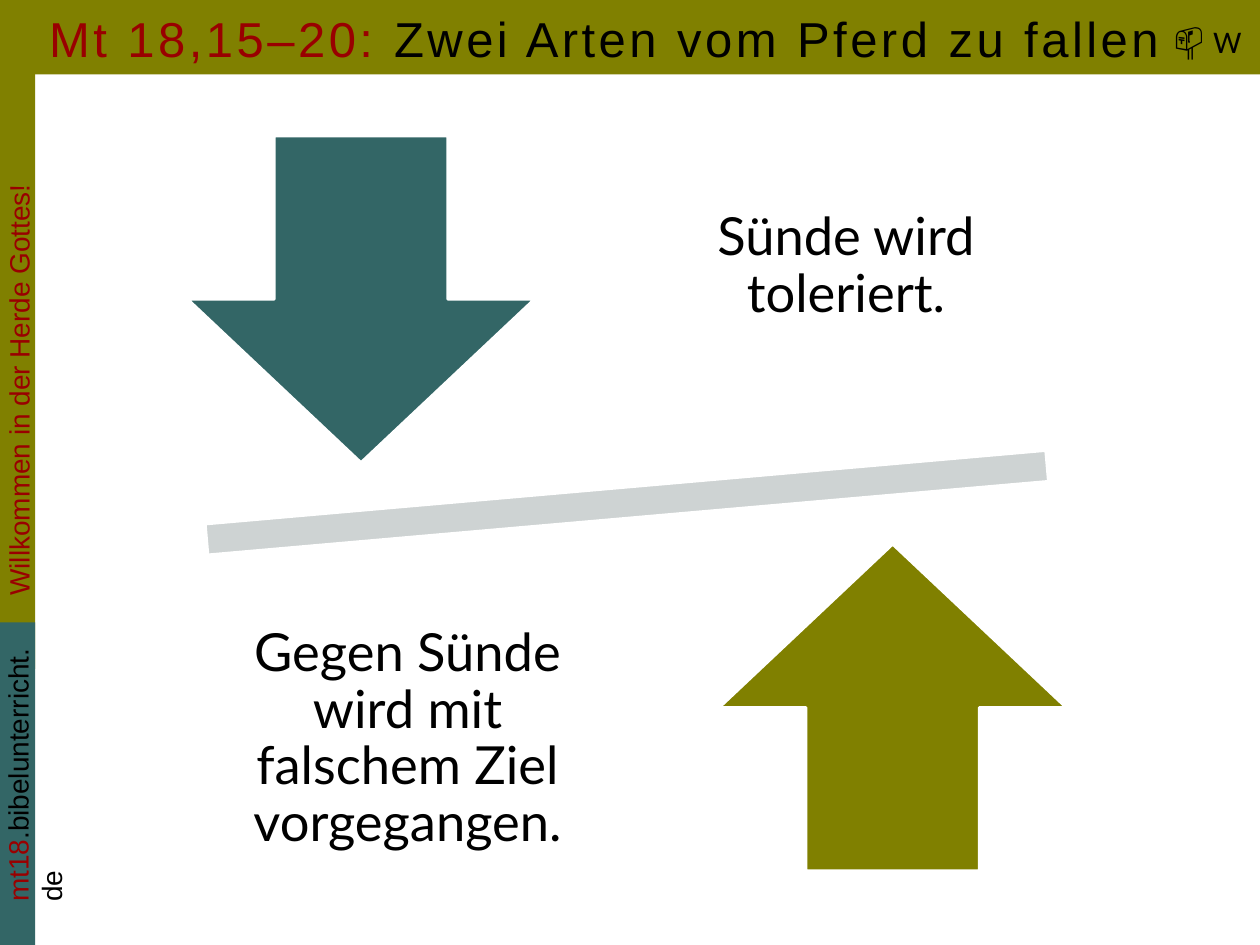
import dataclasses

import pptx
import pptx.dml.color
import pptx.enum.shapes
import pptx.enum.text
import pptx.util

Inches = pptx.util.Inches
Shape = pptx.enum.shapes.MSO_SHAPE
Align = pptx.enum.text.PP_ALIGN
Anchor = pptx.enum.text.MSO_ANCHOR
AutoSize = pptx.enum.text.MSO_AUTO_SIZE


@dataclasses.dataclass(frozen=True)
class Theme:
    """Colours, fonts and type sizes of the slide."""
    olive: str = "808000"
    teal: str = "336666"
    beam: str = "CED3D3"
    red: str = "990000"
    black: str = "000000"
    white: str = "FFFFFF"
    main_font: str = "Arial"
    mark_font: str = "Calibri"
    body_font: str = "Lato"
    title_size: int = 28
    body_size: int = 30
    side_size: int = 16
    icon_size: int = 20
    mark_size: int = 18


THEME = Theme()


def rgb(value):
    """Turn a hex string into a colour."""
    return pptx.dml.color.RGBColor.from_string(value)


def add_shape(slide, kind, box, fill, outlined=False, rotation=0):
    """Add a filled preset shape, with a white outline if asked."""
    shape = slide.shapes.add_shape(kind, *map(Inches, box))
    shape.shadow.inherit = False
    shape.fill.solid()
    shape.fill.fore_color.rgb = rgb(fill)
    shape.rotation = rotation
    if outlined:
        shape.line.color.rgb = rgb(THEME.white)
        shape.line.width = pptx.util.Pt(1.5)
    else:
        shape.line.fill.background()
    return shape


def add_run(paragraph, text, *, size, color=THEME.black, font=THEME.main_font, tracking=0):
    """Append formatted text to a paragraph, with tracking in points."""
    run = paragraph.add_run()
    run.text = text
    run.font.size = pptx.util.Pt(size)
    run.font.name = font
    run.font.color.rgb = rgb(color)
    if tracking:
        run.font._element.set("spc", str(tracking * 100))


def add_text_box(slide, box, *, align=Align.LEFT, anchor=Anchor.TOP, inset=None,
                 rotation=0, grow=False):
    """Add a wrapping text box and return its first paragraph."""
    shape = slide.shapes.add_textbox(*map(Inches, box))
    shape.rotation = rotation
    frame = shape.text_frame
    frame.word_wrap = True
    frame.vertical_anchor = anchor
    frame.auto_size = AutoSize.SHAPE_TO_FIT_TEXT if grow else AutoSize.NONE
    if inset is not None:
        frame.margin_left = frame.margin_right = Inches(inset)
        frame.margin_top = frame.margin_bottom = Inches(inset)
    paragraph = frame.paragraphs[0]
    paragraph.alignment = align
    return paragraph


def add_frame(slide):
    """Draw the top and side bars with the vertical lettering."""
    add_shape(slide, Shape.RECTANGLE, (-0.01, -0.01, 10.01, 0.6), THEME.olive)
    add_shape(slide, Shape.RECTANGLE, (0, 0, 0.28, 5.31), THEME.olive)
    add_shape(slide, Shape.RECTANGLE, (0, 4.94, 0.28, 2.57), THEME.teal)
    address = add_text_box(slide, (-1.02, 5.91, 2.32, 0.37), rotation=270, grow=True)
    add_run(address, "mt18", size=THEME.side_size, color=THEME.red)
    add_run(address, ".bibelunterricht.de", size=THEME.side_size)
    welcome = add_text_box(slide, (-1.78, 2.84, 3.73, 0.24), rotation=270, grow=True)
    add_run(welcome, "Willkommen in der Herde Gottes!", size=THEME.side_size,
            color=THEME.red)


def add_header(slide):
    """Write the title and the mark in the top bar."""
    title = add_text_box(slide, (0.39, 0.05, 8.91, 0.5), anchor=Anchor.MIDDLE, inset=0)
    add_run(title, "Mt 18,15–20:", size=THEME.title_size, color=THEME.red, tracking=2)
    add_run(title, " Zwei Arten vom Pferd zu fallen", size=THEME.title_size, tracking=2)
    mark = add_text_box(slide, (9.09, 0.1, 0.86, 0.44), align=Align.RIGHT, grow=True)
    add_run(mark, "📫 ", size=THEME.icon_size)
    add_run(mark, "W", size=THEME.mark_size, font=THEME.mark_font)


def add_statement(slide, left, top, text):
    """Write one centred statement beside its arrow."""
    paragraph = add_text_box(slide, (left, top, 2.93, 2.72), align=Align.CENTER,
                             anchor=Anchor.MIDDLE, inset=0.23)
    paragraph.line_spacing = 0.9
    add_run(paragraph, text, size=THEME.body_size, font=THEME.body_font)


def add_balance(slide):
    """Draw the tilted beam, the opposing arrows and their statements."""
    add_shape(slide, Shape.MATH_MINUS, (0.42, 3.47, 9.11, 1.04), THEME.beam,
              outlined=True, rotation=355)
    add_shape(slide, Shape.DOWN_ARROW, (1.49, 1.08, 2.75, 2.59), THEME.teal, outlined=True)
    add_statement(slide, 5.25, 0.76, "Sünde wird toleriert.")
    add_shape(slide, Shape.UP_ARROW, (5.71, 4.32, 2.75, 2.59), THEME.olive, outlined=True)
    add_statement(slide, 1.77, 4.51, "Gegen Sünde wird mit falschem Ziel vorgegangen.")


def main():
    """Build and save the slide."""
    presentation = pptx.Presentation()
    presentation.slide_width = Inches(10)
    presentation.slide_height = Inches(7.5)
    slide = presentation.slides.add_slide(presentation.slide_layouts[6])
    add_frame(slide)
    add_header(slide)
    add_balance(slide)
    presentation.save("out.pptx")


if __name__ == "__main__":
    main()
